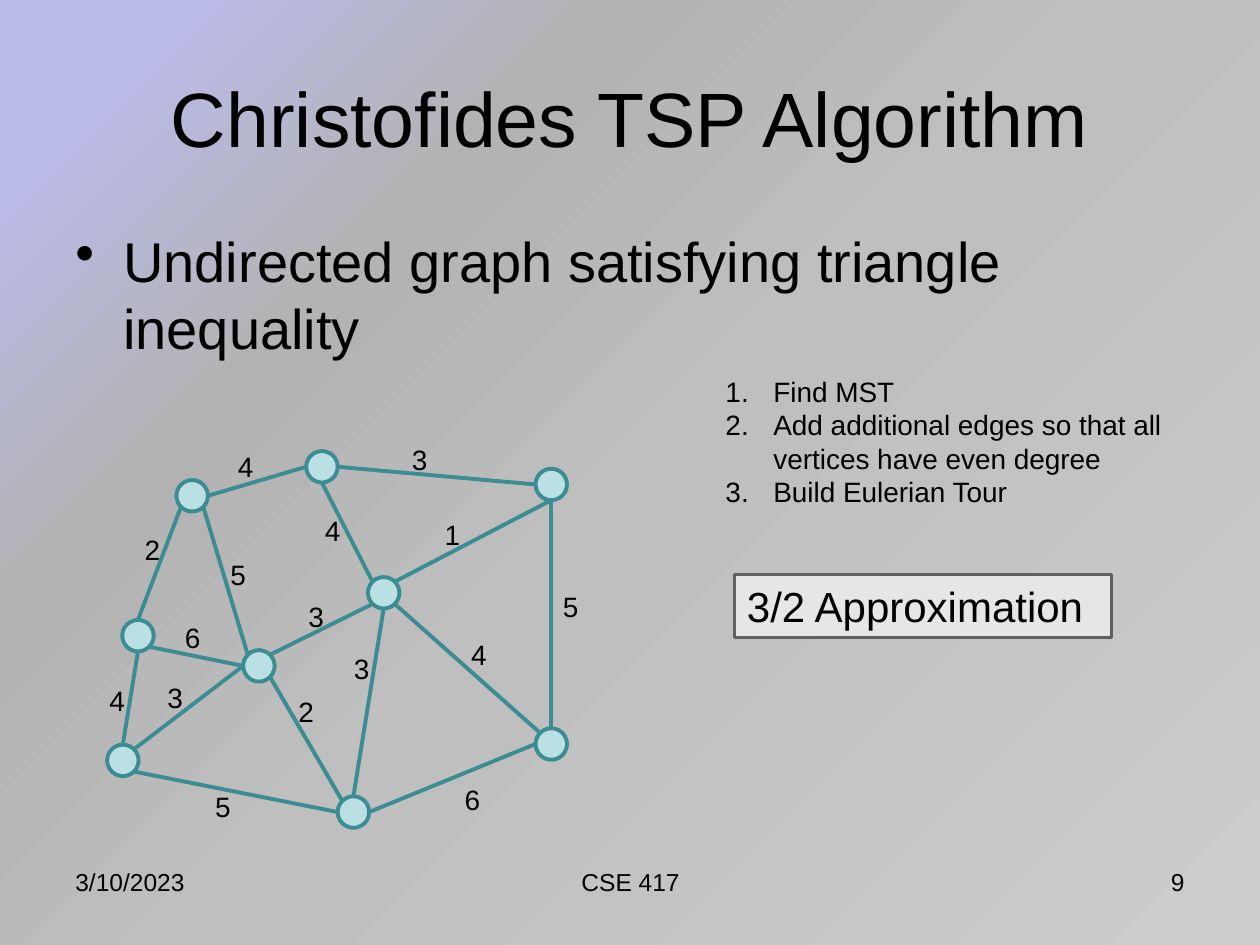
from dataclasses import dataclass
from math import sqrt

from lxml import etree
from pptx import Presentation
from pptx.dml.color import RGBColor
from pptx.enum.shapes import MSO_CONNECTOR as Connector, MSO_SHAPE as Shape
from pptx.enum.text import MSO_ANCHOR as Anchor, MSO_AUTO_SIZE as AutoSize, PP_ALIGN as Align
from pptx.oxml import parse_xml
from pptx.oxml.ns import nsdecls, qn
from pptx.util import Inches, Pt

FONT = "Arial"
BLACK = "000000"
NODE_FILL = "BBE0E3"
GRAPH_LINE = "3C8C93"
RADIUS = 0.125
DIAGONAL = sqrt(0.5)
SITES = {
    "t": (0, -1), "b": (0, 1), "l": (-1, 0), "r": (1, 0),
    "tl": (-DIAGONAL, -DIAGONAL), "tr": (DIAGONAL, -DIAGONAL),
    "bl": (-DIAGONAL, DIAGONAL), "br": (DIAGONAL, DIAGONAL),
}
BACKGROUND_STOPS = [(0, "CCCCCC"), (48, "BFBFBF"), (72, "B3B3B3"), (91, "BABAE8")]


@dataclass
class Edge:
    start: str
    start_site: str
    end: str
    end_site: str
    weight: int
    label_left: float
    label_top: float


@dataclass
class FooterItem:
    text: str
    left: float
    width: float
    align: Align


NODES = {
    "NW": (1.4, 3.81), "SW": (0.85, 5.91), "Mid": (2.92, 4.58),
    "W": (0.97, 4.92), "NE": (4.25, 3.72), "Hub": (1.93, 5.16),
    "S": (2.68, 6.32), "SE": (4.25, 5.78), "N": (2.43, 3.58),
}
EDGES = [
    Edge("NW", "br", "Hub", "tl", 5, 1.73, 4.38),
    Edge("NW", "bl", "W", "t", 2, 1.05, 4.18),
    Edge("NW", "r", "N", "l", 4, 1.79, 3.52),
    Edge("N", "r", "NE", "l", 3, 3.17, 3.46),
    Edge("N", "b", "Mid", "tl", 4, 2.48, 4.03),
    Edge("NE", "b", "Mid", "tr", 1, 3.43, 4.06),
    Edge("Hub", "tr", "Mid", "bl", 3, 2.35, 4.71),
    Edge("W", "br", "Hub", "l", 6, 1.37, 4.88),
    Edge("W", "b", "SW", "t", 4, 0.77, 5.38),
    Edge("SW", "tr", "Hub", "l", 3, 1.23, 5.35),
    Edge("Mid", "b", "S", "t", 3, 2.71, 5.12),
    Edge("NE", "b", "SE", "t", 5, 4.37, 4.63),
    Edge("Mid", "br", "SE", "tl", 4, 3.64, 5.01),
    Edge("S", "r", "SE", "l", 6, 3.59, 6.16),
    Edge("Hub", "br", "S", "tl", 2, 2.27, 5.46),
    Edge("SW", "br", "S", "l", 5, 1.61, 6.22),
]
STEPS = [
    "Find MST",
    "Add additional edges so that all vertices have even degree",
    "Build Eulerian Tour",
]
FOOTER = [
    FooterItem("3/10/2023", 0.5, 2.33, Align.LEFT),
    FooterItem("CSE 417", 3.42, 3.17, Align.CENTER),
    FooterItem("9", 7.17, 2.33, Align.RIGHT),
]


def rgb(color: str) -> RGBColor:
    return RGBColor.from_string(color)


def set_background(s) -> None:
    stops = "".join(
        f'<a:gs pos="{pos * 1000}"><a:srgbClr val="{color}"/></a:gs>'
        for pos, color in BACKGROUND_STOPS
    )
    bg = parse_xml(
        f'<p:bg {nsdecls("p", "a")}><p:bgPr><a:gradFill rotWithShape="0">'
        f'<a:gsLst>{stops}</a:gsLst><a:path path="circle">'
        '<a:fillToRect l="100000" t="100000"/></a:path></a:gradFill>'
        '<a:effectLst/></p:bgPr></p:bg>'
    )
    s.shapes._spTree.addprevious(bg)


def add_run(p, text: str, size: float, align: Align = Align.LEFT) -> None:
    p.alignment = align
    r = p.add_run()
    r.text = text
    r.font.size = Pt(size)
    r.font.name = FONT
    r.font.color.rgb = rgb(BLACK)


def set_bullet(p, tag: str, **attributes: str) -> None:
    pPr = p._p.get_or_add_pPr()
    pPr.set("marL", str(Inches(0.38)))
    pPr.set("indent", str(-Inches(0.38)))
    etree.SubElement(pPr, qn(tag), attributes)


def add_text_box(s, left: float, top: float, width: float, height: float, wrap: bool = True):
    box = s.shapes.add_textbox(Inches(left), Inches(top), Inches(width), Inches(height))
    tf = box.text_frame
    tf.word_wrap = wrap
    return tf


def add_filled_shape(s, kind: Shape, left: float, top: float, width: float, height: float,
                     fill: str, line: str, weight: float):
    sp = s.shapes.add_shape(kind, Inches(left), Inches(top), Inches(width), Inches(height))
    sp.shadow.inherit = False
    sp.fill.solid()
    sp.fill.fore_color.rgb = rgb(fill)
    sp.line.color.rgb = rgb(line)
    sp.line.width = Pt(weight)
    return sp


def site_point(node: str, site: str) -> tuple[float, float]:
    left, top = NODES[node]
    dx, dy = SITES[site]
    return left + RADIUS * (1 + dx), top + RADIUS * (1 + dy)


def add_edge(s, edge: Edge) -> None:
    points = site_point(edge.start, edge.start_site) + site_point(edge.end, edge.end_site)
    line = s.shapes.add_connector(Connector.STRAIGHT, *map(Inches, points))
    line.line.color.rgb = rgb(GRAPH_LINE)
    line.line.width = Pt(2.25)
    etree.SubElement(line._element.spPr, qn("a:effectLst"))


def add_weight(s, edge: Edge) -> None:
    tf = add_text_box(s, edge.label_left, edge.label_top, 0.33, 0.37, wrap=False)
    tf.auto_size = AutoSize.SHAPE_TO_FIT_TEXT
    add_run(tf.paragraphs[0], str(edge.weight), 16)


def main() -> None:
    prs = Presentation()
    prs.slide_width, prs.slide_height = Inches(10), Inches(7.5)
    s = prs.slides.add_slide(prs.slide_layouts[5])
    set_background(s)

    title = s.shapes.title
    title.left, title.top = Inches(0.5), Inches(0.3)
    title.width, title.height = Inches(9), Inches(1.25)
    title.text_frame.vertical_anchor = Anchor.MIDDLE
    add_run(title.text_frame.paragraphs[0], "Christofides TSP Algorithm", 44, Align.CENTER)

    p = add_text_box(s, 0.5, 1.75, 9, 1.59).paragraphs[0]
    add_run(p, "Undirected graph satisfying triangle inequality", 32)
    p.space_before = Pt(3)
    set_bullet(p, "a:buChar", char="•")

    for left, top in NODES.values():
        add_filled_shape(s, Shape.OVAL, left, top, 2 * RADIUS, 2 * RADIUS,
                         NODE_FILL, GRAPH_LINE, 2.25)
    for edge in EDGES:
        add_edge(s, edge)
    for edge in EDGES:
        add_weight(s, edge)

    tf = add_text_box(s, 5.66, 2.92, 4.07, 1.45)
    for i, step in enumerate(STEPS):
        p = tf.add_paragraph() if i else tf.paragraphs[0]
        add_run(p, step, 16)
        set_bullet(p, "a:buAutoNum", type="arabicPeriod")

    ratio = add_filled_shape(s, Shape.RECTANGLE, 5.83, 4.56, 2.99, 0.5, "E6E6E6", "606060", 1.5)
    ratio.text_frame.word_wrap = True
    ratio.text_frame.vertical_anchor = Anchor.TOP
    add_run(ratio.text_frame.paragraphs[0], "3/2 Approximation", 24)

    for item in FOOTER:
        tf = add_text_box(s, item.left, 6.83, item.width, 0.52)
        add_run(tf.paragraphs[0], item.text, 14, item.align)

    prs.save("out.pptx")


if __name__ == "__main__":
    main()
